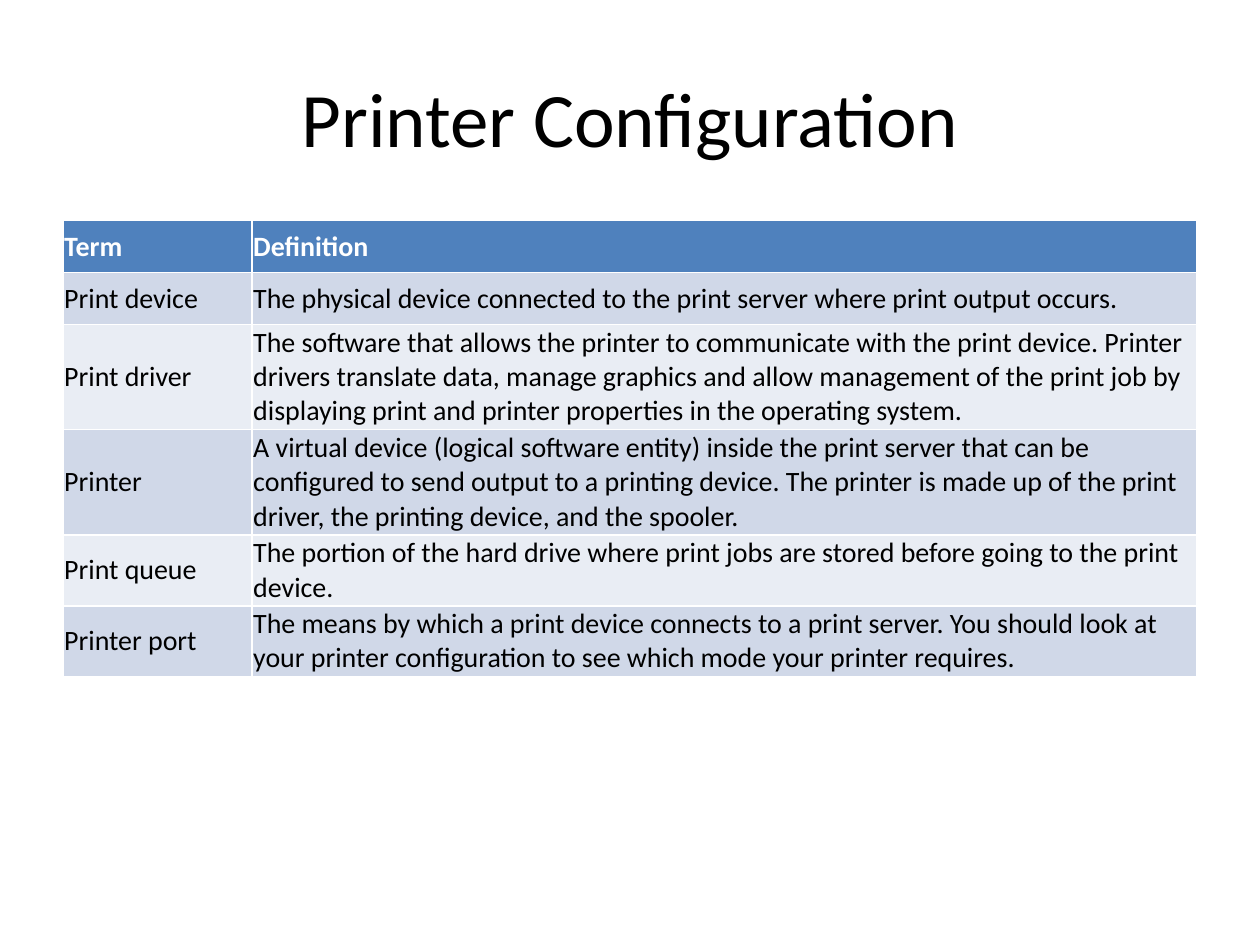
from pptx import Presentation
from pptx.dml.color import RGBColor
from pptx.enum.text import MSO_ANCHOR, PP_ALIGN
from pptx.util import Inches, Pt

BLACK = RGBColor(0x00, 0x00, 0x00)
WHITE = RGBColor(0xFF, 0xFF, 0xFF)
HEADER_BLUE = RGBColor(0x4F, 0x81, 0xBD)
BAND_COLOURS = (RGBColor(0xE9, 0xED, 0xF4), RGBColor(0xD0, 0xD8, 0xE8))

FONT = "Calibri"
SLIDE_WIDTH, SLIDE_HEIGHT = Inches(10), Inches(7.5)
TITLE_BOX = (0.05, 0.04, 0.9, 1 / 6)
TABLE_BOX = (0.05, 7 / 30, 0.9, 0.33)
COLUMN_SHARES = (1 / 6, 5 / 6)
CELL_MARGIN = Inches(0.01)

TERMS = [
    ("Term", "Definition"),
    ("Print device",
     "The physical device connected to the print server where print output occurs."),
    ("Print driver",
     "The software that allows the printer to communicate with the print device. "
     "Printer drivers translate data, manage graphics and allow management of the "
     "print job by displaying print and printer properties in the operating system."),
    ("Printer",
     "A virtual device (logical software entity) inside the print server that can be "
     "configured to send output to a printing device. The printer is made up of the "
     "print driver, the printing device, and the spooler."),
    ("Print queue",
     "The portion of the hard drive where print jobs are stored before going to the "
     "print device."),
    ("Printer port",
     "The means by which a print device connects to a print server. You should look at "
     "your printer configuration to see which mode your printer requires."),
]


def to_lengths(box):
    """Turn shares of the slide's size into left, top, width and height."""
    left, top, width, height = box
    return (round(left * SLIDE_WIDTH), round(top * SLIDE_HEIGHT),
            round(width * SLIDE_WIDTH), round(height * SLIDE_HEIGHT))


def write_text(text_frame, text, size=16, colour=BLACK, bold=False,
               alignment=PP_ALIGN.LEFT):
    """Write one formatted paragraph into a text frame."""
    paragraph = text_frame.paragraphs[0]
    paragraph.alignment = alignment
    run = paragraph.add_run()
    run.text = text
    run.font.name = FONT
    run.font.size = Pt(size)
    run.font.bold = bold
    run.font.color.rgb = colour


def add_title(slide, box, text):
    """Place the title placeholder in its box and fill it."""
    title = slide.shapes.title
    title.left, title.top, title.width, title.height = to_lengths(box)
    title.text_frame.vertical_anchor = MSO_ANCHOR.MIDDLE
    write_text(title.text_frame, text, size=44, alignment=PP_ALIGN.CENTER)


def format_cell(cell, text, is_header, fill_colour):
    """Fill one table cell with its colour, margins and text."""
    cell.fill.solid()
    cell.fill.fore_color.rgb = fill_colour
    cell.vertical_anchor = MSO_ANCHOR.MIDDLE
    cell.margin_left = cell.margin_right = CELL_MARGIN
    cell.margin_top = cell.margin_bottom = CELL_MARGIN
    write_text(cell.text_frame, text, bold=is_header,
               colour=WHITE if is_header else BLACK)


def add_terms_table(slide, box, rows):
    """Build the banded table of terms and definitions in its box."""
    left, top, width, height = to_lengths(box)
    table = slide.shapes.add_table(
        len(rows), len(COLUMN_SHARES), left, top, width, height).table
    for column, share in zip(table.columns, COLUMN_SHARES):
        column.width = round(width * share)
    for row_index, texts in enumerate(rows):
        is_header = row_index == 0
        fill_colour = HEADER_BLUE if is_header else BAND_COLOURS[row_index % 2]
        for column_index, text in enumerate(texts):
            format_cell(table.cell(row_index, column_index), text,
                        is_header, fill_colour)


def main():
    """Create the presentation and save it."""
    presentation = Presentation()
    presentation.slide_width = SLIDE_WIDTH
    presentation.slide_height = SLIDE_HEIGHT
    slide = presentation.slides.add_slide(
        presentation.slide_layouts.get_by_name("Title Only"))
    add_title(slide, TITLE_BOX, "Printer Configuration")
    add_terms_table(slide, TABLE_BOX, TERMS)
    presentation.save("out.pptx")


if __name__ == "__main__":
    main()
